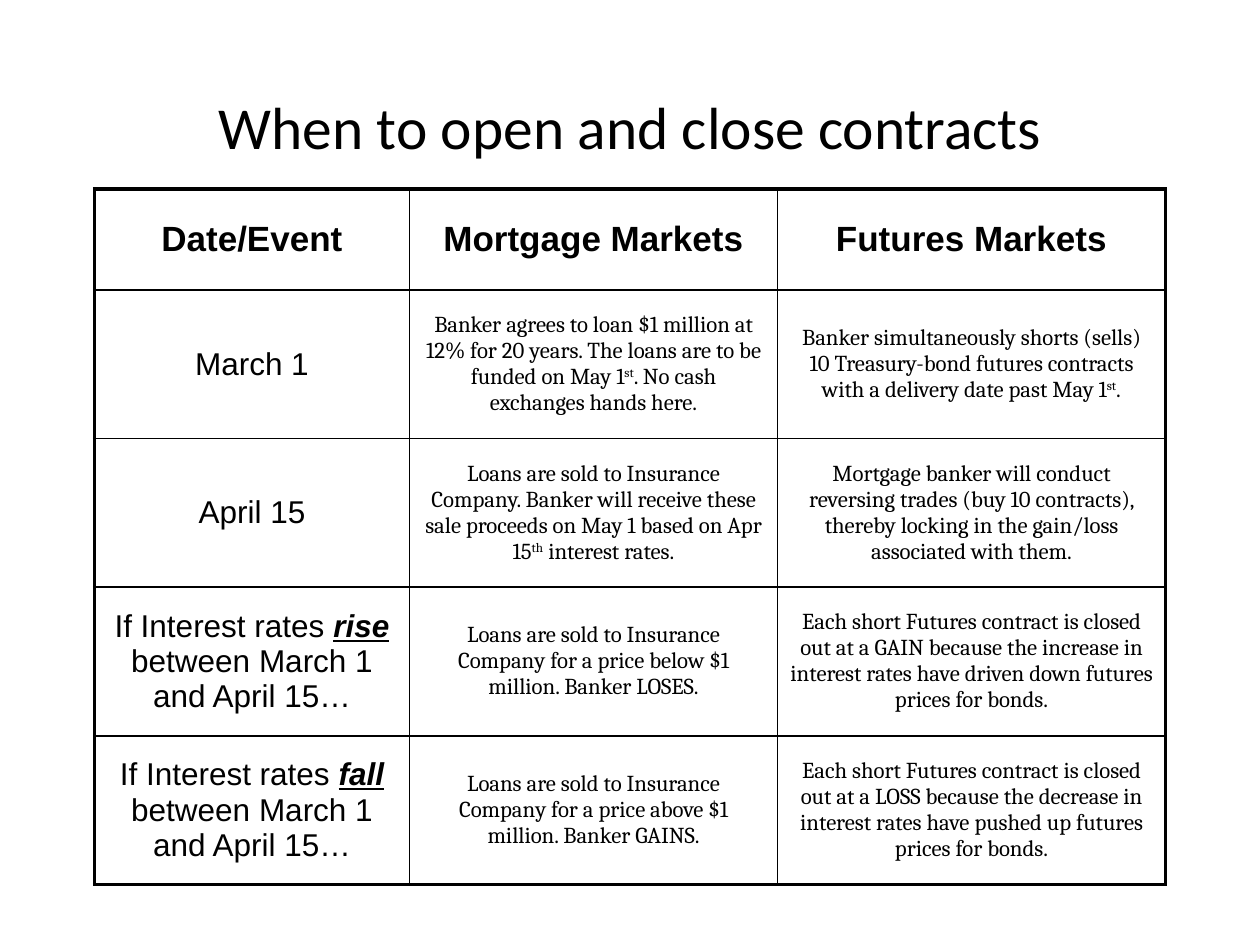
from lxml.etree import SubElement
from pptx import Presentation
from pptx.dml.color import RGBColor
from pptx.enum.text import MSO_ANCHOR as Anchor, PP_ALIGN as Align
from pptx.oxml.ns import qn
from pptx.util import Pt

PX = 9144
COLORS = {"ink": "000000", "paper": "FFFFFF"}
THICK, THIN = 2.25, 1

HEADERS = ["Date/Event", "Mortgage Markets", "Futures Markets"]
EVENTS = [
    [
        ["March 1"],
        ["Banker agrees to loan $1 million at 12% for 20 years. The loans are to be funded on May 1",
         ("st", "super"), ". No cash exchanges hands here."],
        ["Banker simultaneously shorts (sells) 10 Treasury-bond futures contracts with a delivery date past May 1",
         ("st", "super"), "."],
    ],
    [
        ["April 15"],
        ["Loans are sold to Insurance Company. Banker will receive these sale proceeds on May 1 based on Apr 15",
         ("th", "super"), " interest rates."],
        ["Mortgage banker will conduct reversing trades (buy 10 contracts), "
         "thereby locking in the gain/loss associated with them."],
    ],
]
OUTCOMES = [
    ("rise", "below", "LOSES", "GAIN", "increase", "driven down"),
    ("fall", "above", "GAINS", "LOSS", "decrease", "pushed up"),
]


def outcome_row(move, side, banker, result, change, effect):
    return [
        ["If Interest rates ", (move, "strong"), " between March 1 and April 15…"],
        [f"Loans are sold to Insurance Company for a price {side} $1 million. Banker {banker}."],
        [f"Each short Futures contract is closed out at a {result} because the {change} "
         f"in interest rates have {effect} futures prices for bonds."],
    ]


class SlideBuilder:
    def __init__(self, width, height):
        self.presentation = Presentation()
        self.presentation.slide_width = width * PX
        self.presentation.slide_height = height * PX
        self.slide = self.presentation.slides.add_slide(self.presentation.slide_layouts[6])
        background = self.slide.background.fill
        background.solid()
        background.fore_color.rgb = RGBColor.from_string(COLORS["paper"])

    def set_text(self, text_frame, pieces, font_name, size, bold=False):
        text_frame.word_wrap = True
        paragraph = text_frame.paragraphs[0]
        paragraph.alignment = Align.CENTER
        for piece in pieces:
            text, mark = (piece, None) if isinstance(piece, str) else piece
            run = paragraph.add_run()
            run.text = text
            font = run.font
            font.name, font.size = font_name, Pt(size)
            font.bold = bold or mark == "strong"
            font.italic = font.underline = mark == "strong"
            font.color.rgb = RGBColor.from_string(COLORS["ink"])
            if mark == "super":
                run._r.get_or_add_rPr().set("baseline", "30000")

    def title(self, text, left, top, width, height):
        box = self.slide.shapes.add_textbox(left * PX, top * PX, width * PX, height * PX)
        box.text_frame.vertical_anchor = Anchor.MIDDLE
        self.set_text(box.text_frame, [text], "Calibri", 34)

    def border(self, cell, side, width):
        line = SubElement(cell._tc.get_or_add_tcPr(), qn(f"a:ln{side}"), w=str(Pt(width)))
        fill = SubElement(line, qn("a:solidFill"))
        SubElement(fill, qn("a:srgbClr"), val=COLORS["ink"])

    def table(self, rows, left, top, widths, heights):
        frame = self.slide.shapes.add_table(
            len(heights), len(widths), left * PX, top * PX, sum(widths) * PX, sum(heights) * PX)
        table = frame.table
        table.first_row = table.horz_banding = False
        for column, width in zip(table.columns, widths):
            column.width = width * PX
        for row, height in zip(table.rows, heights):
            row.height = height * PX
        last_row, last_column = len(heights) - 1, len(widths) - 1
        for i, row in enumerate(rows):
            for j, pieces in enumerate(row):
                cell = table.cell(i, j)
                cell.vertical_anchor = Anchor.MIDDLE
                outer = {"L": j == 0, "R": j == last_column, "T": i == 0, "B": i == last_row}
                for side, is_outer in outer.items():
                    self.border(cell, side, THICK if is_outer else THIN)
                cell.fill.background()
                if i == 0:
                    self.set_text(cell.text_frame, pieces, "Arial", 20, bold=True)
                elif j == 0:
                    self.set_text(cell.text_frame, pieces, "Arial", 18)
                else:
                    self.set_text(cell.text_frame, pieces, "Cambria", 13)


def main():
    builder = SlideBuilder(1000, 750)
    builder.title("When to open and close contracts", 75, 50, 850, 100)
    rows = [[[header] for header in HEADERS], *EVENTS]
    rows += [outcome_row(*outcome) for outcome in OUTCOMES]
    builder.table(rows, 75, 150, [250, 292, 308], [80] + [118] * 4)
    builder.presentation.save("out.pptx")


if __name__ == "__main__":
    main()
